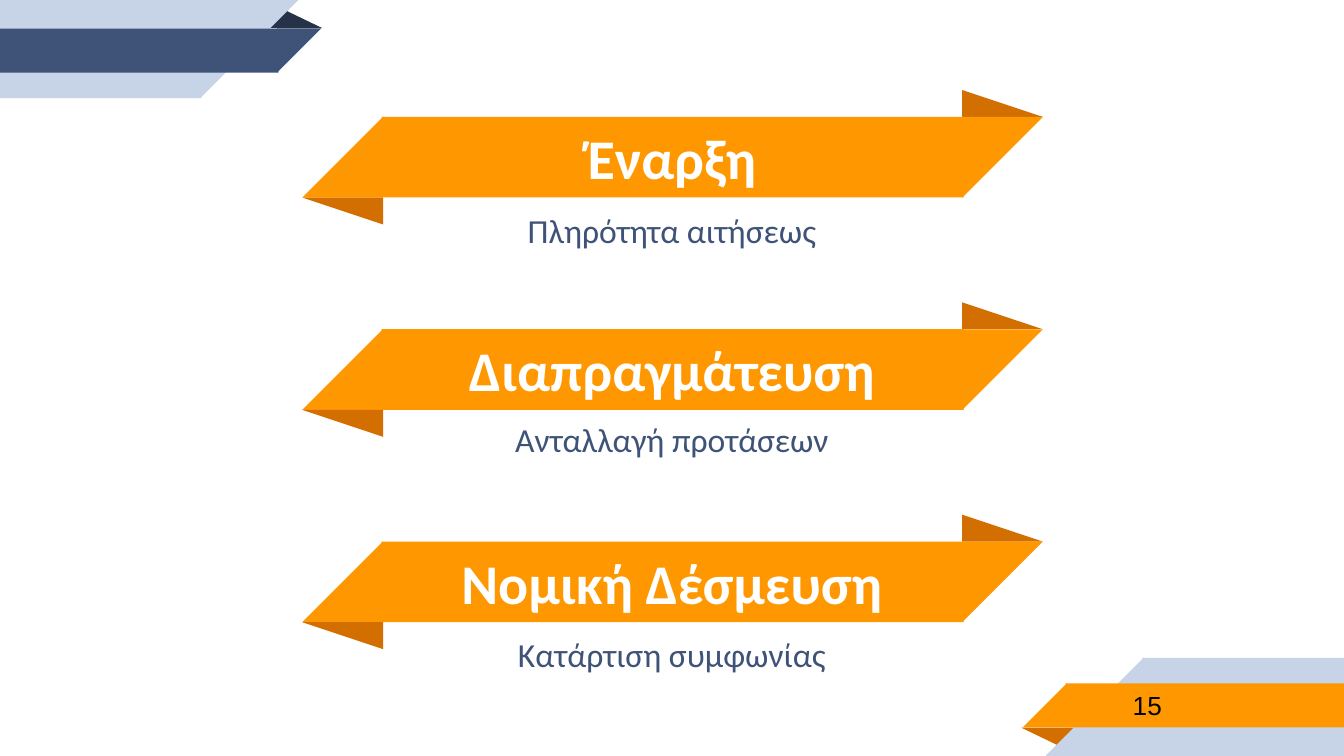
from copy import deepcopy

from pptx import Presentation
from pptx.dml.color import RGBColor
from pptx.enum.shapes import MSO_SHAPE as SHAPE
from pptx.enum.text import MSO_ANCHOR, MSO_AUTO_SIZE, PP_ALIGN
from pptx.util import Inches, Pt

ORANGE = RGBColor(0xFF, 0x98, 0x00)
RUST = RGBColor(0xD2, 0x6F, 0x00)
NAVY = RGBColor(0x3F, 0x53, 0x78)
INK = RGBColor(0x26, 0x32, 0x48)
MIST = RGBColor(0xC7, 0xD3, 0xE6)
WHITE = RGBColor(0xFF, 0xFF, 0xFF)
BLACK = RGBColor(0, 0, 0)

WIDTH = 10
HEIGHT = WIDTH * 9 / 16
PITCH = 1.58  # distance from one stage to the next
SEAM = 0.01  # overlap that hides the joint between bar and tip
STAGES = [  # heading, caption, caption offset and height
    ("Έναρξη", "Πληρότητα αιτήσεως", 0.79, 0.51),
    ("Διαπραγμάτευση", "Ανταλλαγή προτάσεων", 0.79, 0.45),
    ("Νομική Δέσμευση", "Κατάρτιση συμφωνίας", 0.81, 0.45),
]


def add_part(s, kind, box, color, turned=False, flipped=False, apex=None):
    """Add a plain filled shape, optionally mirrored and turned upside down."""
    sp = s.shapes.add_shape(kind, *map(Inches, box))
    sp.shadow.inherit = False
    sp.fill.solid()
    sp.fill.fore_color.rgb = color
    sp.line.fill.background()
    if apex is not None:
        sp.adjustments[0] = apex
    if flipped:
        sp._element.spPr.xfrm.set("flipH", "1")
    if turned:
        sp.rotation = 180


def add_corner(s, box, fold, band, turned):
    """Corner ribbon; turned puts it at the top left, else at the bottom right."""
    x, y, w, h = box

    def place(left, top, pw, ph):
        if turned:
            return x + left, y + top, pw, ph
        return x + w - left - pw, y + h - top - ph, pw, ph

    bar_top, bar_h = 0.29 * h, 0.45 * h
    add_part(s, SHAPE.ISOSCELES_TRIANGLE, place(w - 0.43, 0.07, 0.43, 0.14),
             fold, not turned, apex=0.324)
    for top, length, thick, color in ((0, 1.5, h, MIST),
                                      (bar_top, w - bar_h, bar_h, band)):
        add_part(s, SHAPE.RECTANGLE, place(0, top, length, thick), color, turned, True)
        add_part(s, SHAPE.RIGHT_TRIANGLE, place(length - SEAM, top, thick, thick),
                 color, turned, True)


def add_ribbon(s, box):
    """Slanted ribbon with a folded tip at each end; five rows high."""
    x, y, w, h = box
    row, tip = h / 5, h * 3 / 5
    right = x + w - tip
    bar_top = y + row
    add_part(s, SHAPE.ISOSCELES_TRIANGLE, (right, y, tip, row), RUST, apex=0)
    add_part(s, SHAPE.RECTANGLE,
             (x + tip - SEAM, bar_top, w - 2 * tip + 2 * SEAM, tip), ORANGE)
    add_part(s, SHAPE.RIGHT_TRIANGLE, (right, bar_top, tip, tip), ORANGE, True, True)
    add_part(s, SHAPE.RIGHT_TRIANGLE, (x, bar_top, tip, tip), ORANGE, flipped=True)
    add_part(s, SHAPE.ISOSCELES_TRIANGLE, (x, bar_top + tip, tip, row), RUST, True, apex=0)


def set_text(sp, box, text, size, color, font="Calibri", bold=False,
             align=PP_ALIGN.CENTER, after=0):
    sp.left, sp.top, sp.width, sp.height = map(Inches, box)
    tf = sp.text_frame
    tf.text = text
    tf.word_wrap = True
    tf.auto_size = MSO_AUTO_SIZE.NONE
    tf.vertical_anchor = MSO_ANCHOR.MIDDLE
    tf.margin_left = tf.margin_right = tf.margin_top = tf.margin_bottom = Inches(0.1)
    p = tf.paragraphs[0]
    p.alignment = align
    p.space_before, p.space_after = Pt(0), Pt(after)
    f = p.runs[0].font
    f.name, f.size, f.bold, f.color.rgb = font, Pt(size), bold, color


def clone_placeholder(s, ph):
    """Put another placeholder of the same kind on top of the slide."""
    el = deepcopy(ph._element)
    el.nvSpPr.cNvPr.id = max(sp.shape_id for sp in s.shapes) + 1
    s.shapes._spTree.append(el)
    return s.shapes[-1]


def add_stage(s, box, title, body, heading, caption, offset, caption_h):
    """Ribbon with its heading, and the caption below."""
    x, y, w, h = box
    add_ribbon(s, box)
    left, width = x + 0.61, w - 1.23
    set_text(clone_placeholder(s, title), (left, y + 0.21 * h, width, 0.58 * h),
             heading, 30, WHITE, bold=True)
    set_text(clone_placeholder(s, body), (left, y + offset * h, width, caption_h),
             caption, 18, NAVY, after=10)


def main():
    prs = Presentation()
    prs.slide_width, prs.slide_height = Inches(WIDTH), Inches(HEIGHT)
    s = prs.slides.add_slide(prs.slide_layouts[0])
    title, body = s.placeholders

    # Corner decoration
    add_corner(s, (WIDTH - 2.4, HEIGHT - 0.73, 2.4, 0.73), RUST, ORANGE, False)
    add_corner(s, (0, 0, 2.4, 0.73), INK, NAVY, True)

    # Stages
    for i, stage in enumerate(STAGES):
        add_stage(s, (2.25, 0.67 + i * PITCH, 5.51, 1), title, body, *stage)
    for ph in (title, body):
        s.shapes._spTree.remove(ph._element)

    # Slide number
    number = s.shapes.add_textbox(0, 0, 0, 0)
    set_text(number, (8.33, 5.07, 1.63, 0.35), "15", 14, BLACK,
             font="Arial", align=PP_ALIGN.LEFT)
    prs.save("out.pptx")


if __name__ == "__main__":
    main()
